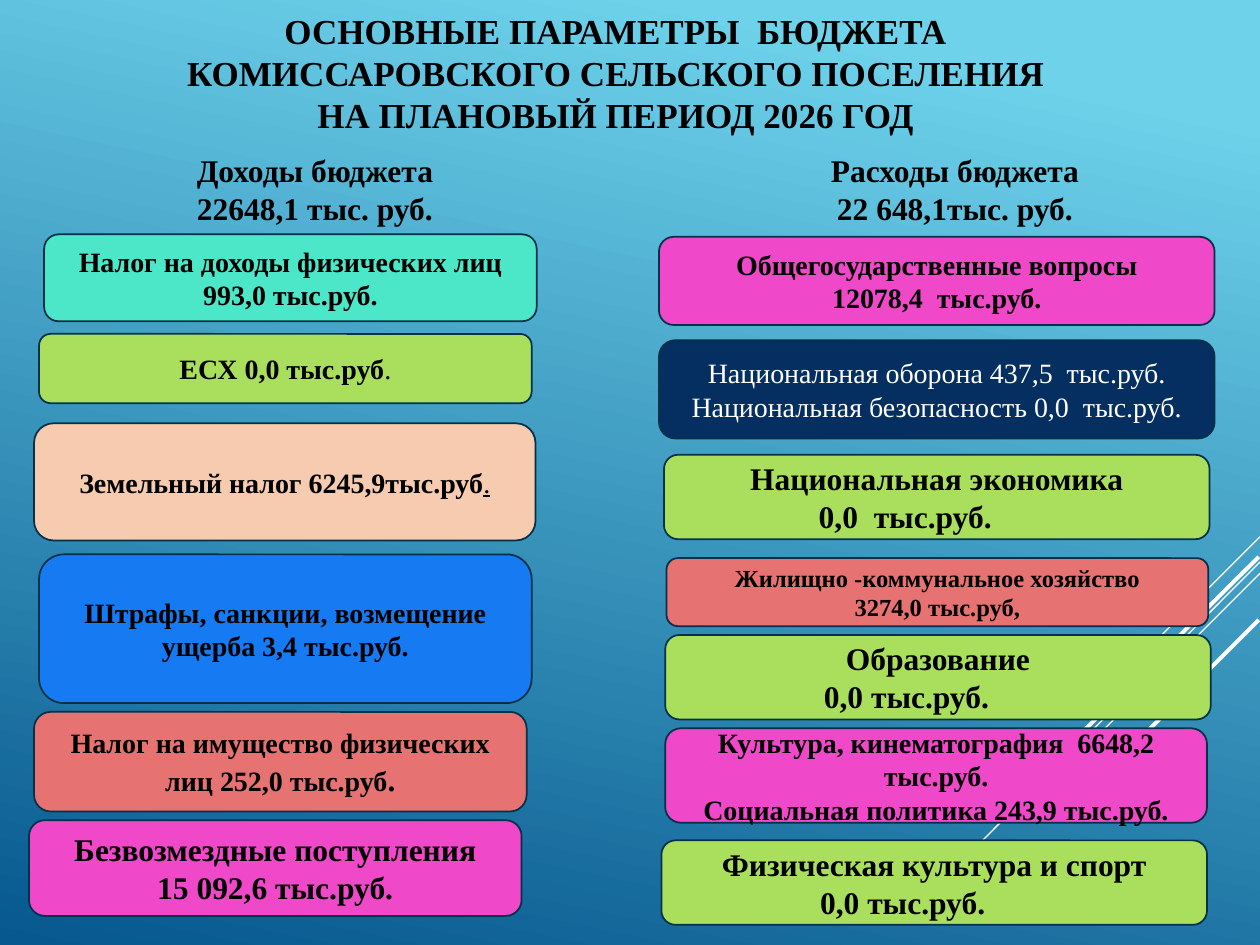
"""Build the 2026 budget overview slide: revenue on the left, spending on the right."""
import lxml.etree
import pptx
import pptx.dml.color
import pptx.enum.shapes
import pptx.enum.text
import pptx.oxml.ns
import pptx.util

Inches = pptx.util.Inches


def color(value):
    return pptx.dml.color.RGBColor.from_string(value)


def write(frame, text, size, ink="000000", bold=True):
    frame.text = text
    frame.word_wrap = True
    formats = {"size": pptx.util.Pt(size), "name": "Times New Roman", "bold": bold}
    for paragraph in frame.paragraphs:
        paragraph.alignment = pptx.enum.text.PP_ALIGN.CENTER
        for run in paragraph.runs:
            for key, value in formats.items():
                setattr(run.font, key, value)
            run.font.color.rgb = color(ink)


deck = pptx.Presentation()
deck.slide_width, deck.slide_height = Inches(10), Inches(7.5)
slide = deck.slides.add_slide(deck.slide_layouts[5])

backdrop = slide.background.fill
backdrop.gradient()
backdrop.gradient_angle = 258
for stop, (position, shade) in zip(backdrop.gradient_stops, [(0.1, "6ED2EB"), (1, "06588E")]):
    stop.position = position
    stop.color.rgb = color(shade)

rays = [
    (10, 4.26, 9.17, 5.09, 0.75),
    (10, 4.46, 7.3, 7.17, 0.75),
    (10, 4.55, 8.28, 6.27, 0.75),
    (9.99, 4.42, 8.41, 5.99, 2.25),
    (9.99, 4.92, 8.85, 6.06, 2.25),
]
for *ends, weight in rays:
    ray = slide.shapes.add_connector(
        pptx.enum.shapes.MSO_CONNECTOR.STRAIGHT, *[Inches(end) for end in ends])
    ray.line.color.rgb = color("FFFFFF")
    ray.line.width = pptx.util.Pt(weight)
    lxml.etree.SubElement(ray._element.spPr, pptx.oxml.ns.qn("a:effectLst"))

title = slide.shapes.title
placement = {"left": 0.47, "top": 0.13, "width": 8.83, "height": 0.89}
for key, value in placement.items():
    setattr(title, key, Inches(value))
write(title.text_frame,
      "ОСНОВНЫЕ ПАРАМЕТРЫ  БЮДЖЕТА\vКОМИССАРОВСКОГО СЕЛЬСКОГО ПОСЕЛЕНИЯ"
      "\vНА ПЛАНОВЫЙ ПЕРИОД 2026 ГОД", 20)
title.text_frame.vertical_anchor = pptx.enum.text.MSO_ANCHOR.MIDDLE

headings = [
    (0.31, 4.38, "Доходы бюджета\n22648,1 тыс. руб."),
    (5.55, 4.06, "Расходы бюджета\n22 648,1тыс. руб."),
]
for left, width, text in headings:
    heading = slide.shapes.add_textbox(Inches(left), Inches(1.15), Inches(width), Inches(0.71))
    write(heading.text_frame, text, 18)

LIME, PINK, CORAL, NAVY = "AADF5E", "EF48C9", "E67272", "052F61"
budget_items = [
    (0.35, 1.86, 3.91, 0.69, "4BE7C8", 16, "Налог на доходы физических лиц 993,0 тыс.руб."),
    (0.31, 2.65, 3.91, 0.55, LIME, 16, "ЕСХ 0,0 тыс.руб"),
    (0.27, 3.36, 3.98, 0.93, "F6CBAF", 16, "Земельный налог 6245,9тыс.руб"),
    (0.31, 4.4, 3.91, 1.18, "167BF3", 16, "Штрафы, санкции, возмещение ущерба 3,4 тыс.руб."),
    (0.27, 5.65, 3.91, 0.79, CORAL, 16, "Налог на имущество физических лиц 252,0 тыс.руб"),
    (0.23, 6.51, 3.91, 0.76, PINK, 18, "Безвозмездные поступления\n15 092,6 тыс.руб."),
    (5.23, 1.88, 4.41, 0.7, PINK, 16, "Общегосударственные вопросы\n12078,4  тыс.руб."),
    (5.23, 2.7, 4.41, 0.78, NAVY, 16,
     "Национальная оборона 437,5  тыс.руб.\nНациональная безопасность 0,0  тыс.руб."),
    (5.27, 3.61, 4.33, 0.67, LIME, 18, "Национальная экономика\n0,0  тыс.руб."),
    (5.29, 4.43, 4.3, 0.54, CORAL, 14, "Жилищно -коммунальное хозяйство\n3274,0 тыс.руб,"),
    (5.28, 5.04, 4.33, 0.67, LIME, 18, "Образование\n0,0 тыс.руб."),
    (5.28, 5.78, 4.3, 0.75, PINK, 16,
     "Культура, кинематография  6648,2 тыс.руб.\nСоциальная политика 243,9 тыс.руб."),
    (5.25, 6.67, 4.33, 0.67, LIME, 18, "Физическая культура и спорт\n0,0 тыс.руб."),
]
final_dots = {
    "ЕСХ": {"bold": False, "size": pptx.util.Pt(16)},
    "Земельный": {"bold": False, "underline": True, "size": pptx.util.Pt(16)},
    "Налог на имущество": {"bold": True, "size": pptx.util.Pt(18)},
}
for left, top, width, height, fill, size, text in budget_items:
    item = slide.shapes.add_shape(
        pptx.enum.shapes.MSO_SHAPE.ROUNDED_RECTANGLE,
        Inches(left), Inches(top), Inches(width), Inches(height))
    item.shadow.inherit = False
    item.fill.solid()
    item.fill.fore_color.rgb = color(fill)
    item.line.color.rgb = color("043148")
    item.line.width = pptx.util.Pt(1)
    write(item.text_frame, text, size, "FFFFFF" if fill == NAVY else "000000", fill != NAVY)
    item.text_frame.vertical_anchor = pptx.enum.text.MSO_ANCHOR.MIDDLE
    amount = item.text_frame.paragraphs[-1]
    if fill == LIME and size == 18:
        amount._p.get_or_add_pPr().set("marR", str(Inches(0.5)))
    for start, formats in final_dots.items():
        if text.startswith(start):
            dot = amount.add_run()
            dot.text = "."
            dot.font.name = "Times New Roman"
            dot.font.color.rgb = color("000000")
            for key, value in formats.items():
                setattr(dot.font, key, value)

deck.save("out.pptx")
